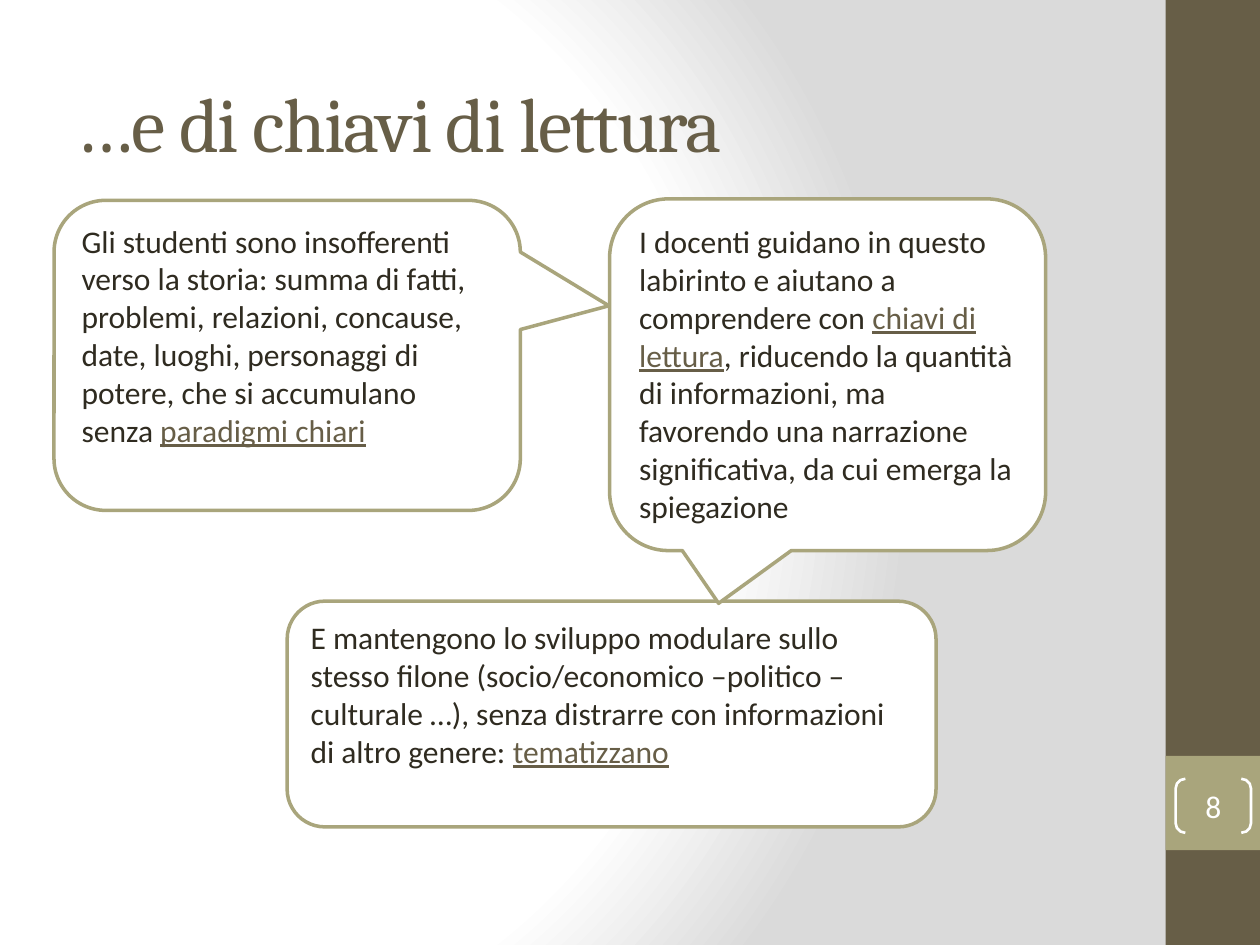
from pptx import Presentation
from pptx.dml.color import RGBColor
from pptx.enum.shapes import MSO_SHAPE
from pptx.enum.text import MSO_ANCHOR, PP_ALIGN
from pptx.oxml import parse_xml
from pptx.oxml.ns import nsdecls
from pptx.util import Cm, Pt

BROWN = RGBColor(0x67, 0x5E, 0x47)
OLIVE = RGBColor(0xA9, 0xA5, 0x7C)
INK = RGBColor(0x2F, 0x2B, 0x20)
WHITE = RGBColor(0xFF, 0xFF, 0xFF)

TITLE = "…e di chiavi di lettura"
PAGE_NUMBER = "8"
SIDEBAR = [
    ((23.5, 0, 1.9, 19.05), BROWN),
    ((23.5, 15.24, 1.9, 1.9), OLIVE),
]
CALLOUT = MSO_SHAPE.ROUNDED_RECTANGULAR_CALLOUT
BUBBLES = [
    (MSO_SHAPE.ROUNDED_RECTANGLE, (5.79, 12.12, 13.08, 4.55), (0.167,), [
        ("E mantengono lo sviluppo modulare sullo stesso filone "
         "(socio/economico –politico –culturale …), senza distrarre con "
         "informazioni di altro genere: ", False),
        ("tematizzano", True),
    ]),
    (CALLOUT, (1.09, 4.04, 9.4, 6.25), (0.69, -0.16, 0.167), [
        ("Gli studenti sono insofferenti verso la storia: summa di fatti, "
         "problemi, relazioni, concause, date, luoghi, personaggi di potere, "
         "che si accumulano senza ", False),
        ("paradigmi chiari", True),
    ]),
    (CALLOUT, (12.29, 4.01, 8.79, 7.09), (-0.25, 0.65, 0.167), [
        ("I docenti guidano in questo labirinto e aiutano a comprendere con ",
         False),
        ("chiavi di lettura", True),
        (", riducendo la quantità di informazioni, ma favorendo una "
         "narrazione significativa, da cui emerga la spiegazione", False),
    ]),
]
BACKGROUND = f"""<p:bg {nsdecls('p', 'a')}><p:bgPr>
<a:gradFill rotWithShape="1"><a:gsLst>
<a:gs pos="0"><a:srgbClr val="FFFFFF"/></a:gs>
<a:gs pos="75000"><a:srgbClr val="FFFFFF"/></a:gs>
<a:gs pos="100000"><a:srgbClr val="DADADA"/></a:gs>
</a:gsLst><a:path path="circle">
<a:fillToRect l="20000" t="50000" r="100000" b="50000"/>
</a:path></a:gradFill><a:effectLst/></p:bgPr></p:bg>"""


def add_block(slide, kind, box, fill=None, line=None, width=2, adjust=()):
    block = slide.shapes.add_shape(kind, *map(Cm, box))
    block.shadow.inherit = False
    for index, value in enumerate(adjust):
        block.adjustments[index] = value
    if fill is None:
        block.fill.background()
    else:
        block.fill.solid()
        block.fill.fore_color.rgb = fill
    if line is None:
        block.line.fill.background()
    else:
        block.line.color.rgb = line
        block.line.width = Pt(width)
    return block


def style(font, size, color, name="Calibri"):
    font.name = name
    font.size = Pt(size)
    font.color.rgb = color


def add_title(slide):
    title = slide.shapes.title
    title.left, title.top, title.width, title.height = map(
        Cm, (1.27, 0.76, 21.16, 3.4))
    title.text_frame.text = TITLE
    title.text_frame.vertical_anchor = MSO_ANCHOR.MIDDLE
    heading = title.text_frame.paragraphs[0]
    heading.alignment = PP_ALIGN.LEFT
    style(heading.font, 44, BROWN, "Cambria")
    heading.runs[0]._r.get_or_add_rPr().set("spc", "-100")


def add_page_number(slide):
    badge = add_block(slide, MSO_SHAPE.DOUBLE_BRACKET, (23.7, 15.7, 1.52, 1.09),
                      line=WHITE, width=1.5, adjust=(0.18,))
    frame = badge.text_frame
    frame.margin_left = frame.margin_right = 0
    frame.margin_top = frame.margin_bottom = 0
    frame.vertical_anchor = MSO_ANCHOR.MIDDLE
    frame.text = PAGE_NUMBER
    frame.paragraphs[0].alignment = PP_ALIGN.CENTER
    style(frame.paragraphs[0].font, 18, WHITE)


def add_bubble(slide, kind, box, adjust, passages):
    bubble = add_block(slide, kind, box, WHITE, OLIVE, adjust=adjust)
    frame = bubble.text_frame
    frame.word_wrap = True
    frame.vertical_anchor = MSO_ANCHOR.TOP
    paragraph = frame.paragraphs[0]
    paragraph.alignment = PP_ALIGN.LEFT
    style(paragraph.font, 18, INK)
    for text, is_key in passages:
        run = paragraph.add_run()
        run.text = text
        style(run.font, 18, BROWN if is_key else INK)
        run.font.underline = is_key


def main():
    deck = Presentation()
    deck.slide_width, deck.slide_height = Cm(25.4), Cm(19.05)
    slide = deck.slides.add_slide(deck.slide_layouts[5])
    slide._element.cSld.insert(0, parse_xml(BACKGROUND))
    for box, color in SIDEBAR:
        add_block(slide, MSO_SHAPE.RECTANGLE, box, color)
    add_title(slide)
    add_page_number(slide)
    for bubble in BUBBLES:
        add_bubble(slide, *bubble)
    deck.save("out.pptx")


if __name__ == "__main__":
    main()
